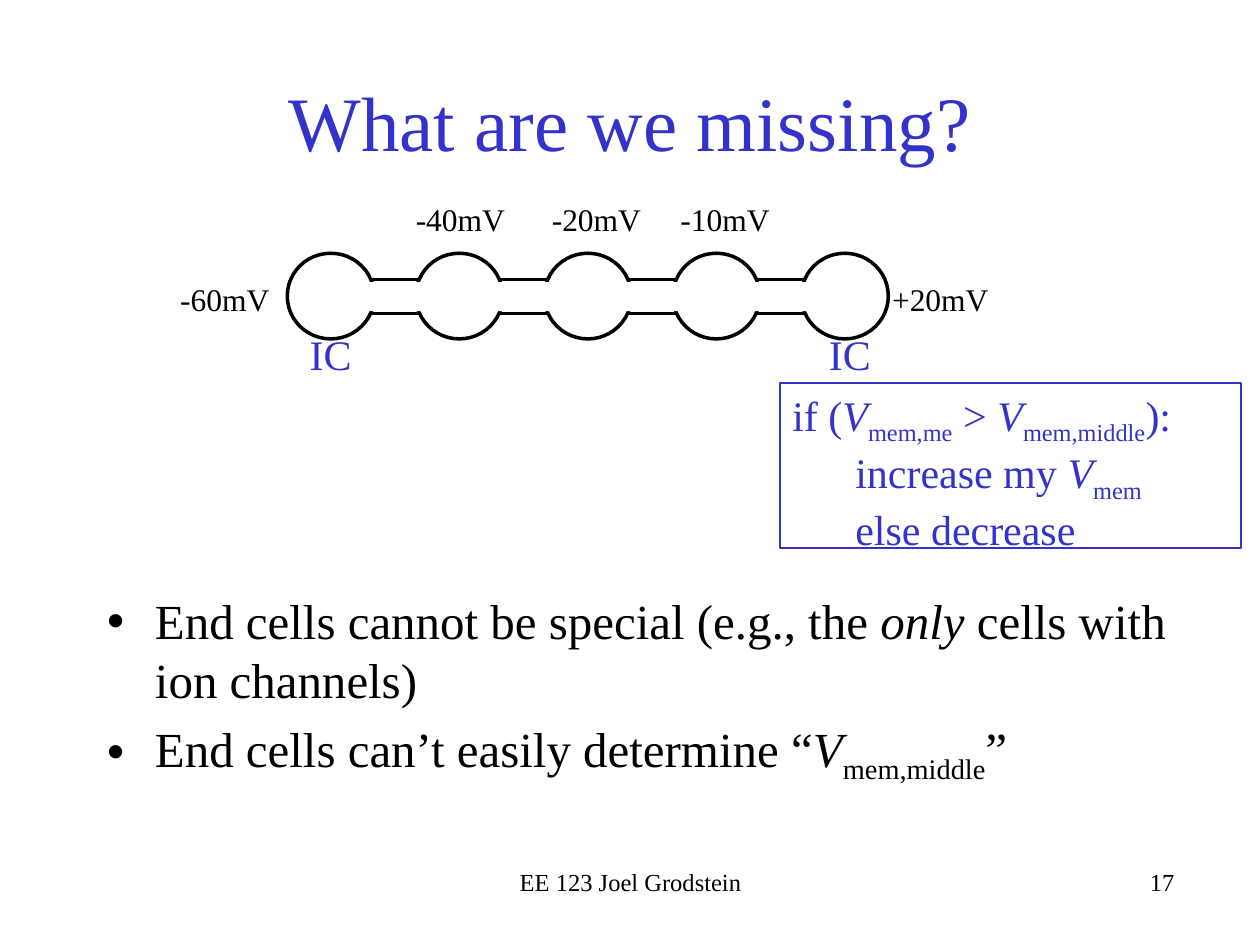
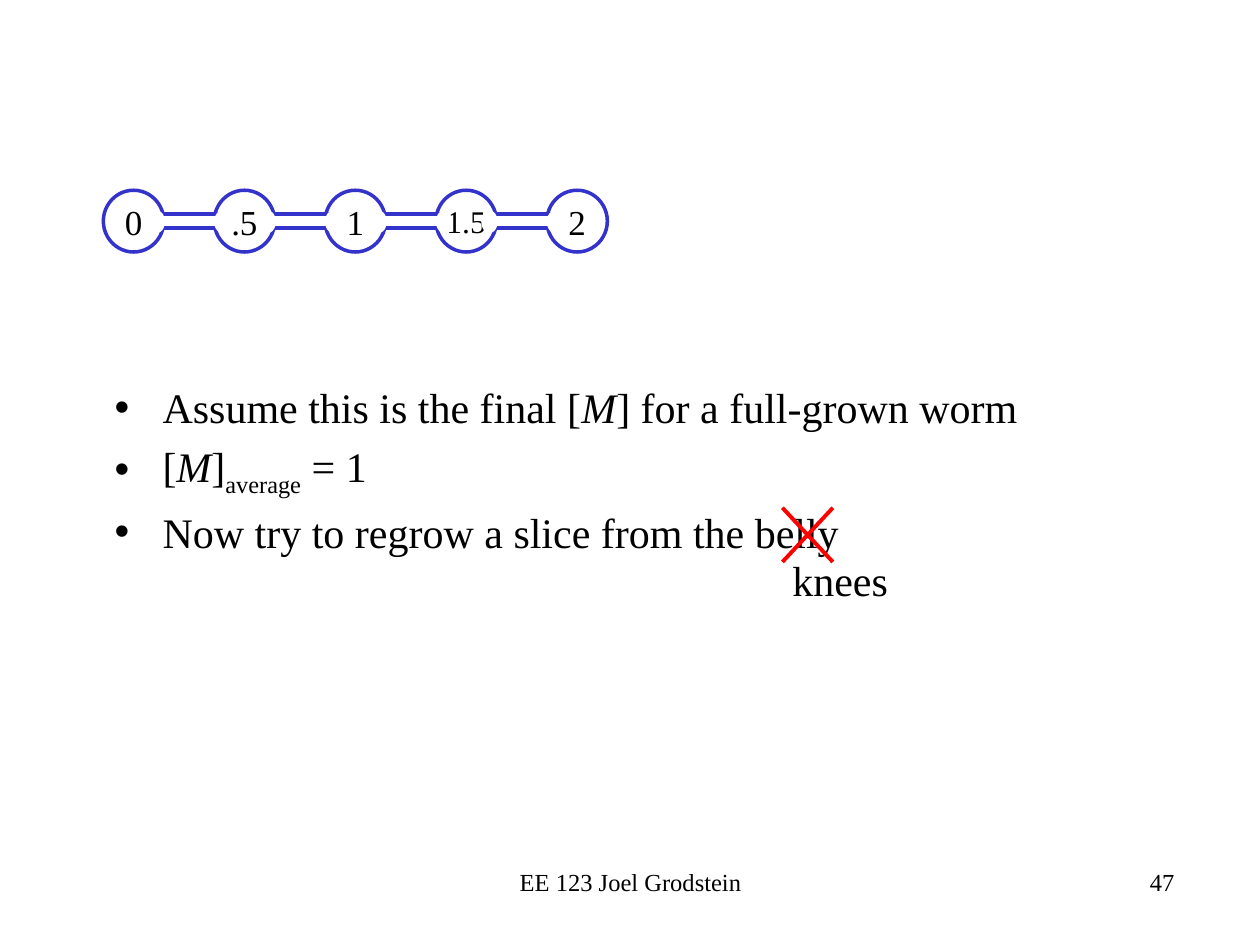
import pptx
import pptx.util
import pptx.dml.color
import pptx.enum.shapes
import pptx.enum.text
import pptx.oxml.ns
import lxml.etree

Inches = pptx.util.Inches
Pt = pptx.util.Pt
SHAPE = pptx.enum.shapes.MSO_SHAPE
ALIGN = pptx.enum.text.PP_ALIGN
ANCHOR = pptx.enum.text.MSO_ANCHOR
qn = pptx.oxml.ns.qn

COLOURS = {"ink": "000000", "accent": "3333CC", "paper": "FFFFFF", "cross": "FF0000"}
FONT = "Times New Roman"


def write(box, paragraphs, size, colour="ink", align=ALIGN.LEFT, anchor=ANCHOR.TOP,
          inset=None, wrap=True, bullets=False, indents=()):
    frame = box.text_frame
    frame.word_wrap = wrap
    frame.auto_size = pptx.enum.text.MSO_AUTO_SIZE.NONE
    frame.vertical_anchor = anchor
    if inset is not None:
        frame.margin_left = frame.margin_right = Inches(inset)
        frame.margin_top = frame.margin_bottom = Inches(inset)
    for index, pieces in enumerate(paragraphs):
        para = frame.paragraphs[0] if index == 0 else frame.add_paragraph()
        para.alignment = align
        properties = para._p.get_or_add_pPr()
        if bullets:
            para.space_before = Pt(size * 0.2)
            properties.set("marL", str(Inches(0.38)))
            properties.set("indent", str(-Inches(0.38)))
            lxml.etree.SubElement(properties, qn("a:buChar")).set("char", "•")
        elif indents:
            properties.set("marL", str(Inches(indents[index])))
        for text, style in pieces:
            span = para.add_run()
            span.text = text
            span.font.name = FONT
            span.font.size = Pt(size)
            span.font.color.rgb = pptx.dml.color.RGBColor.from_string(COLOURS[colour])
            span.font.italic = style == "italic"
            if style == "sub":
                span._r.get_or_add_rPr().set("baseline", "-25000")


def draw(page, kind, left, top, width, height, fill=None, line=None, weight=2):
    shape = page.shapes.add_shape(kind, Inches(left), Inches(top), Inches(width), Inches(height))
    shape.shadow.inherit = False
    if fill:
        shape.fill.solid()
        shape.fill.fore_color.rgb = pptx.dml.color.RGBColor.from_string(COLOURS[fill])
    else:
        shape.fill.background()
    if line:
        shape.line.color.rgb = pptx.dml.color.RGBColor.from_string(COLOURS[line])
        shape.line.width = Pt(weight)
    else:
        shape.line.fill.background()
    return shape


deck = pptx.Presentation()
deck.slide_width = Inches(10)
deck.slide_height = Inches(7.5)

pages = []
for number in ("17", "47"):
    page = deck.slides.add_slide(deck.slide_layouts[1])
    for text, left, height, align in (
        (number, 6.25, 0.5, ALIGN.RIGHT),
        ("EE 123 Joel Grodstein", 3.42, 0.34, ALIGN.CENTER),
    ):
        box = page.shapes.add_textbox(Inches(left), Inches(6.83), Inches(3.17), Inches(height))
        write(box, [[(text, "")]], 14, align=align)
    pages.append(page)
missing_page, worm_page = pages

title = missing_page.shapes.title
title.left, title.top, title.width, title.height = (Inches(n) for n in (0.75, 0.33, 8.5, 1.25))
write(title, [[("What are we missing?", "")]], 44, "accent", ALIGN.CENTER, ANCHOR.MIDDLE)

body = missing_page.placeholders[1]
body.left, body.top, body.width, body.height = (Inches(n) for n in (0.75, 4.64, 8.91, 2.03))
write(body, [
    [("End cells cannot be special (e.g., the ", ""), ("only", "italic"),
     (" cells with ion channels)", "")],
    [("End cells can’t easily determine “", ""), ("V", "italic"),
     ("mem,middle", "sub"), ("”", "")],
], 28, bullets=True)

draw(missing_page, SHAPE.RECTANGLE, 2.77, 2.22, 3.98, 0.27, "paper", "ink")
for cell in range(5):
    draw(missing_page, SHAPE.OVAL, 2.28 + 1.02 * cell, 2.01, 0.69, 0.68, "paper", "ink")
draw(missing_page, SHAPE.RECTANGLE, 2.73, 2.24, 4.05, 0.23, "paper")

for voltage, left, top in (
    ("-60mV", 1.43, 2.22), ("-40mV", 3.3, 1.59), ("-20mV", 4.38, 1.59),
    ("-10mV", 5.4, 1.59), ("+20mV", 7.08, 2.22),
):
    box = missing_page.shapes.add_textbox(Inches(left), Inches(top), Inches(0.77), Inches(0.3))
    write(box, [[(voltage, "")]], 18, anchor=ANCHOR.MIDDLE, inset=0, wrap=False)

for left in (2.36, 6.48):
    box = missing_page.shapes.add_textbox(Inches(left), Inches(2.56), Inches(0.61), Inches(0.5))
    write(box, [[("IC", "")]], 24, "accent")

rule_box = draw(missing_page, SHAPE.RECTANGLE, 6.19, 3.04, 3.66, 1.31, line="accent", weight=0.75)
write(rule_box, [
    [("if (", ""), ("V", "italic"), ("mem,me", "sub"), (" > ", ""),
     ("V", "italic"), ("mem,middle", "sub"), ("):", "")],
    [("increase my ", ""), ("V", "italic"), ("mem", "sub")],
    [("else decrease", "")],
], 24, "accent", indents=(0, 0.5, 0.5))

worm_title = worm_page.shapes.title._element
worm_title.getparent().remove(worm_title)
body = worm_page.placeholders[1]
body.left, body.top, body.width, body.height = (Inches(n) for n in (0.81, 2.98, 8.5, 3.91))
write(body, [
    [("Assume this is the final [", ""), ("M", "italic"), ("] for a full-grown worm", "")],
    [("[", ""), ("M", "italic"), ("]", ""), ("average", "sub"), (" = 1", "")],
    [("Now try to regrow a slice from the belly", "")],
], 24, bullets=True)

for start, end in ((6.61, 6.21), (6.21, 6.61)):
    stroke = worm_page.shapes.add_connector(
        pptx.enum.shapes.MSO_CONNECTOR.STRAIGHT,
        Inches(start), Inches(4.03), Inches(end), Inches(4.46))
    stroke.line.color.rgb = pptx.dml.color.RGBColor.from_string(COLOURS["cross"])
    stroke.line.width = Pt(2.25)
    lxml.etree.SubElement(stroke._element.spPr, qn("a:effectLst"))

box = worm_page.shapes.add_textbox(Inches(6.19), Inches(4.35), Inches(1.63), Inches(0.5))
write(box, [[("knees", "")]], 24)

worm_left, worm_pitch = 0.82, 0.88
for cell, level in enumerate(("0", ".5", "1", "1.5", "2")):
    circle = draw(worm_page, SHAPE.OVAL, worm_left + worm_pitch * cell, 1.51, 0.48, 0.49,
                  line="accent")
    write(circle, [[(level, "")]], 18 if level == "1.5" else 20, align=ALIGN.CENTER,
          anchor=ANCHOR.MIDDLE, inset=0, wrap=False)
for link in range(4):
    left = worm_left + worm_pitch * link
    draw(worm_page, SHAPE.RECTANGLE, left + 0.42, 1.7, 0.52, 0.11, "paper", "accent")
    for opening in (0.36, 0.88):
        draw(worm_page, SHAPE.OVAL, left + opening, 1.67, 0.13, 0.18, "paper")

deck.save("out.pptx")
